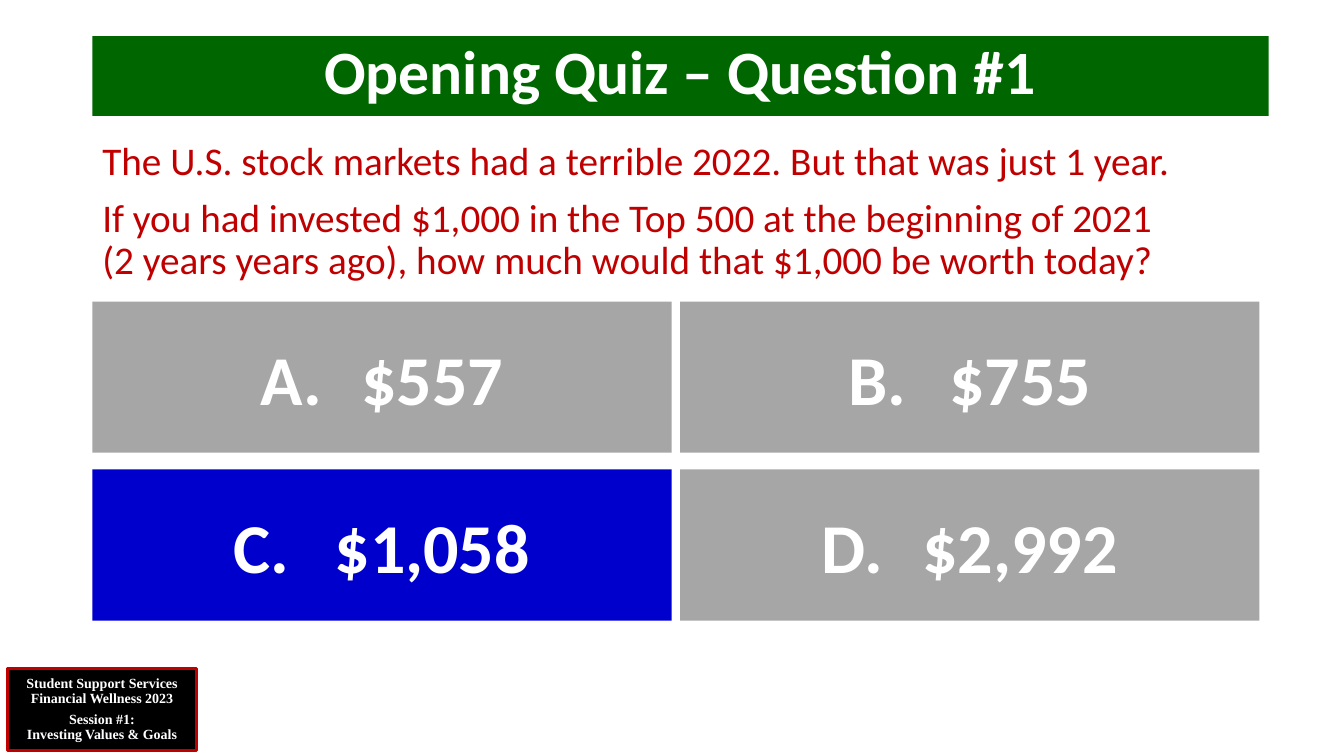
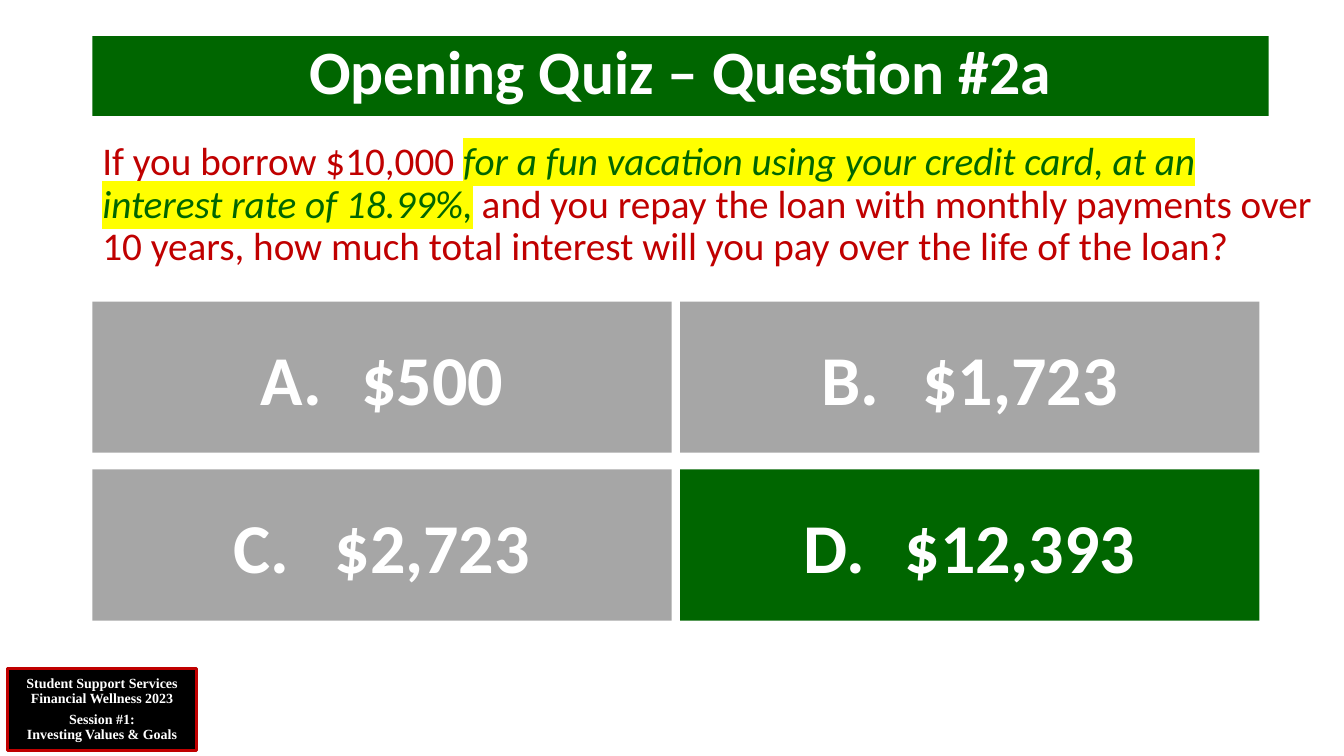
from dataclasses import dataclass

from lxml import etree
from pptx import Presentation
from pptx import util as u
from pptx.dml.color import RGBColor
from pptx.enum import shapes, text
from pptx.oxml.ns import qn


@dataclass(frozen=True)
class Theme:
    green: str = "006600"
    blue: str = "0000CC"
    red: str = "C00000"
    grey: str = "A6A6A6"
    white: str = "FFFFFF"
    black: str = "000000"
    yellow: str = "FFFF00"
    font: str = "Calibri"
    footer_font: str = "Times New Roman"
    title_size: int = 44
    question_size: int = 28
    answer_size: int = 50
    footer_size: int = 10
    line_spacing: float = 0.9


T = Theme()

# Lengths in centimetres
LEFT = 2.33
ANSWER_TOP, ANSWER_W, ANSWER_H = 7.6, 14.6, 3.81
GAP_X, GAP_Y = 0.21, 0.42
ANSWER_TAB = 2.54

PLAIN, MARKED = "plain", "marked"

QUIZ = [
    {
        "title": "Opening Quiz – Question #1",
        "question": [
            [("The U.S. stock markets had a terrible 2022. But that was just 1 year.", PLAIN)],
            [("If you had invested $1,000 in the Top 500 at the beginning of 2021\v"
              "(2 years years ago), how much would that $1,000 be worth today?", PLAIN)],
        ],
        "answers": ["$557", "$755", "$1,058", "$2,992"],
        "correct": "C",
        "correct_fill": T.blue,
    },
    {
        "title": "Opening Quiz – Question #2a",
        "question": [
            [("If you borrow $10,000 ", PLAIN),
             ("for a fun vacation using your credit card, at an interest rate of 18.99%,", MARKED),
             (" and you repay the loan with monthly payments over 10 years, "
              "how much total interest will you pay over the life of the loan?", PLAIN)],
        ],
        "answers": ["$500", "$1,723", "$2,723", "$12,393"],
        "correct": "D",
        "correct_fill": T.green,
    },
]


def rgb(value):
    return RGBColor.from_string(value)


def add_run(p, words, size, color, font=T.font, bold=False, italic=False):
    """Add a run; a vertical tab in the words becomes a line break."""
    for i, line in enumerate(words.split("\v")):
        if i:
            p.add_line_break()
        r = p.add_run()
        r.text = line
        r.font.size = u.Pt(size)
        r.font.name = font
        r.font.bold = bold
        r.font.italic = italic
        r.font.color.rgb = rgb(color)
    return r


def highlight(r, color):
    mark = etree.Element(qn("a:highlight"))
    etree.SubElement(mark, qn("a:srgbClr"), val=color)
    r.font._rPr.find(qn("a:solidFill")).addnext(mark)


def add_tab_stop(p, pos):
    tabs = etree.SubElement(p._p.get_or_add_pPr(), qn("a:tabLst"))
    etree.SubElement(tabs, qn("a:tab"), pos=str(u.Cm(pos)), algn="l")


def add_paragraph(tf, first, align, before=0):
    p = tf.paragraphs[0] if first else tf.add_paragraph()
    p.alignment = align
    p.line_spacing = T.line_spacing
    if before and not first:
        p.space_before = u.Pt(before)
    return p


def add_box(s, x, y, w, h, fill, line=None, anchor=text.MSO_ANCHOR.MIDDLE):
    sp = s.shapes.add_shape(shapes.MSO_SHAPE.RECTANGLE, u.Cm(x), u.Cm(y), u.Cm(w), u.Cm(h))
    sp.shadow.inherit = False
    sp.fill.solid()
    sp.fill.fore_color.rgb = rgb(fill)
    if line:
        sp.line.color.rgb = rgb(line)
        sp.line.width = u.Pt(2.25)
    else:
        sp.line.fill.background()
    sp.text_frame.vertical_anchor = anchor
    return sp.text_frame


def add_title(s, title):
    tf = add_box(s, LEFT, 0.91, 29.64, 2.01, T.green, anchor=text.MSO_ANCHOR.TOP)
    p = add_paragraph(tf, True, text.PP_ALIGN.CENTER)
    add_run(p, title, T.title_size, T.white, bold=True)


def add_footer(s):
    tf = add_box(s, 0.18, 16.84, 4.78, 2.08, T.black, line=T.red)
    lines = [
        ("Student Support Services", 0),
        ("Financial Wellness 2023", 0),
        ("Session #1:\vInvesting Values & Goals", 4),
    ]
    for i, (words, before) in enumerate(lines):
        p = add_paragraph(tf, i == 0, text.PP_ALIGN.CENTER, before)
        add_run(p, words, T.footer_size, T.white, font=T.footer_font, bold=True)


def add_question(s, paragraphs):
    tb = s.shapes.add_textbox(u.Cm(LEFT), u.Cm(3.45), u.Cm(31.14), u.Cm(4))
    tf = tb.text_frame
    tf.word_wrap = True
    for i, runs in enumerate(paragraphs):
        p = add_paragraph(tf, i == 0, text.PP_ALIGN.LEFT, before=10)
        for words, style in runs:
            marked = style == MARKED
            r = add_run(p, words, T.question_size, T.green if marked else T.red, italic=marked)
            if marked:
                highlight(r, T.yellow)


def add_answers(s, answers, correct, correct_fill):
    """Lay the answers out in two columns, lettered row by row."""
    for i, (letter, amount) in enumerate(zip("ABCD", answers)):
        row, col = divmod(i, 2)
        tf = add_box(s, LEFT + col * (ANSWER_W + GAP_X), ANSWER_TOP + row * (ANSWER_H + GAP_Y),
                     ANSWER_W, ANSWER_H, correct_fill if letter == correct else T.grey)
        p = tf.paragraphs[0]
        p.alignment = text.PP_ALIGN.CENTER
        add_tab_stop(p, ANSWER_TAB)
        add_run(p, f"{letter}.\t{amount}", T.answer_size, T.white, bold=True)


def main():
    prs = Presentation()
    prs.slide_width, prs.slide_height = u.Cm(33.87), u.Cm(19.05)
    for quiz in QUIZ:
        s = prs.slides.add_slide(prs.slide_layouts[6])
        add_footer(s)
        add_title(s, quiz["title"])
        add_question(s, quiz["question"])
        add_answers(s, quiz["answers"], quiz["correct"], quiz["correct_fill"])
    prs.save("out.pptx")


if __name__ == "__main__":
    main()
